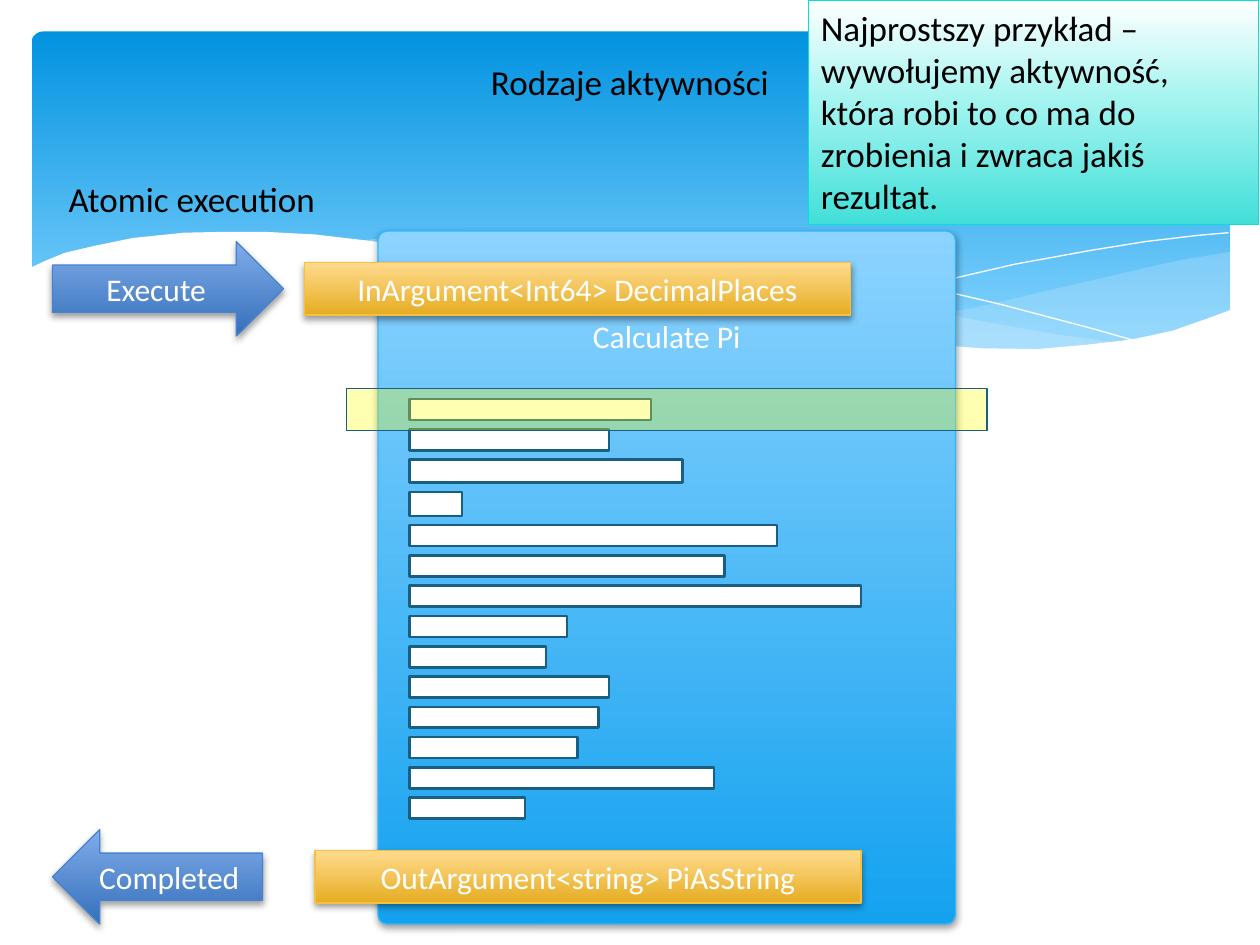
import copy

import lxml.etree
import pptx
import pptx.dml.color
import pptx.enum.shapes
import pptx.enum.text
import pptx.oxml.ns
import pptx.util

Pt = pptx.util.Pt
qn = pptx.oxml.ns.qn
SHAPE = pptx.enum.shapes.MSO_SHAPE
ALIGN = pptx.enum.text.PP_ALIGN
ANCHOR = pptx.enum.text.MSO_ANCHOR

BLUE_ARROW = [(0, "80ACEA"), (100, "3570BA")]
GOLD = [(0, "FFDB8E"), (100, "E6AD22")]

# Outlines of the header waves, as points
RIGHT_WAVE = [
    (702, 144), (673, 149), (642, 156), (599, 166), (561, 175), (525, 182),
    (476, 191), (508, 195), (536, 198), (570, 199.5), (601, 199.5),
    (634, 196.5), (663, 191), (683, 185), (703, 178), (703, 144)]
MIDDLE_WAVE = [
    (643, 196.5), (603, 191), (558, 183), (508, 173), (453, 160), (420, 152),
    (390, 146), (361, 141), (334, 137.5), (302, 134.5), (274, 134),
    (248, 134), (225, 135.5), (206, 137.5), (246, 143), (291, 152),
    (323, 160), (382, 173), (433, 183.5), (479, 191.5), (520, 197),
    (557, 200), (589, 201), (617, 199.5)]
FALLING_LINE = [
    (222, 140), (247, 137), (279, 134.5), (312, 134.5), (352, 137),
    (400, 142), (438, 147), (479, 153.5), (523, 162.5), (572, 174),
    (625, 188), (653, 196)]
RISING_LINE = [
    (441, 185), (484, 173.5), (539, 160.5), (580, 151), (624, 143),
    (655, 138), (685, 134.5), (702, 133)]
WHITE_WAVE = [
    (703.5, 177), (690, 182), (670, 189), (647, 194), (621, 197),
    (593, 199.5), (560, 199), (523, 196), (481, 191), (434, 183), (381, 172),
    (322, 158.5), (282, 149), (244, 142), (210, 137.5), (180, 134),
    (152, 132.5), (127, 132.5), (105, 133), (76, 136), (54, 140.5),
    (37, 144.5), (26, 149), (16.5, 153.5), (16.5, 237), (703.5, 237)]

# Width and height of each code line
CODE_LINES = [
    (138, 12), (114, 12), (156, 13.2), (30, 13.7), (210, 12), (180, 12),
    (258, 12), (90, 12), (78, 12), (114, 12), (108, 12), (96, 12),
    (174, 12), (66, 12)]
CODE_GAP = 5.3


def color(hex_text):
    return pptx.dml.color.RGBColor.from_string(hex_text)


class SlideBuilder:
    font = "Calibri"

    def __init__(self, slide):
        self.slide = slide

    def paint(self, shape, fill=None, line=None, line_width=0.75, alpha=None):
        """Fill is a hex string, a list of (percent, hex) stops, or None."""
        shape.shadow.inherit = False
        properties = shape._element.spPr
        if fill is None:
            shape.fill.background()
        elif isinstance(fill, str):
            shape.fill.solid()
            shape.fill.fore_color.rgb = color(fill)
            if alpha is not None:
                solid = properties.find(qn("a:solidFill"))
                lxml.etree.SubElement(
                    solid[0], qn("a:alpha"), val=str(alpha * 1000))
        else:
            shape.fill.gradient()
            shape.fill.gradient_angle = 270
            stop_list = properties.find(qn("a:gradFill")).find(qn("a:gsLst"))
            while len(stop_list) < len(fill):
                stop_list.append(copy.deepcopy(stop_list[0]))
            for stop, (percent, hex_text) in zip(shape.fill.gradient_stops, fill):
                stop.position = percent / 100
                stop.color.rgb = color(hex_text)
        if line is None:
            shape.line.fill.background()
        else:
            shape.line.color.rgb = color(line)
            shape.line.width = Pt(line_width)

    def shape(self, kind, left, top, width, height, corner=None, **style):
        shape = self.slide.shapes.add_shape(
            kind, Pt(left), Pt(top), Pt(width), Pt(height))
        if corner is not None:
            shape.adjustments[0] = corner
        self.paint(shape, **style)
        return shape

    def raised(self, kind, left, top, width, height, text, **style):
        """Add a captioned shape with a soft shadow below it."""
        shape = self.shape(kind, left, top, width, height, **style)
        effects = shape._element.spPr.find(qn("a:effectLst"))
        shadow = lxml.etree.SubElement(
            effects, qn("a:outerShdw"), blurRad=str(Pt(4)), dist=str(Pt(2)),
            dir="5400000", rotWithShape="0")
        black = lxml.etree.SubElement(shadow, qn("a:srgbClr"), val="000000")
        lxml.etree.SubElement(black, qn("a:alpha"), val="38000")
        self.caption(shape, text, 18, "FFFFFF", ALIGN.CENTER, ANCHOR.MIDDLE)
        return shape

    def freeform(self, points, closed=True, **style):
        start, *others = [(Pt(x), Pt(y)) for x, y in points]
        builder = self.slide.shapes.build_freeform(*start)
        builder.add_line_segments(others, close=closed)
        self.paint(builder.convert_to_shape(), **style)

    def text_box(self, left, top, width, height, text, align, anchor, wrap=True):
        box = self.slide.shapes.add_textbox(
            Pt(left), Pt(top), Pt(width), Pt(height))
        self.caption(box, text, 20, "000000", align, anchor, wrap)

    def caption(self, shape, text, size, text_color, align, anchor, wrap=True):
        frame = shape.text_frame
        frame.text = text
        frame.word_wrap = wrap
        frame.vertical_anchor = anchor
        paragraph = frame.paragraphs[0]
        paragraph.alignment = align
        font = paragraph.runs[0].font
        font.name = self.font
        font.size = Pt(size)
        font.color.rgb = color(text_color)


def add_header(builder):
    builder.shape(SHAPE.ROUNDED_RECTANGLE, 18, 18, 684.7, 194.4, corner=0.034,
                  fill=[(0, "0293E0"), (90, "83D3FE")])
    builder.freeform(RIGHT_WAVE, fill="C6E7FC", alpha=29)
    builder.freeform(MIDDLE_WAVE, fill="C6E7FC", alpha=40)
    for points in (FALLING_LINE, RISING_LINE):
        builder.freeform(points, closed=False, line="FFFFFF", line_width=0)
    builder.freeform(WHITE_WAVE, fill="FFFFFF")
    builder.text_box(36, 26.6, 648, 39.6, "Rodzaje aktywności",
                     ALIGN.CENTER, ANCHOR.MIDDLE)


def add_activity(builder):
    panel = builder.raised(
        SHAPE.ROUNDED_RECTANGLE, 216, 132, 330, 396, "Calculate Pi",
        corner=0.016, fill=[(0, "8CD3FF"), (100, "14A2EF")], line="31B6FD")
    panel.text_frame.vertical_anchor = ANCHOR.TOP
    panel.text_frame.margin_top = Pt(47.5)
    for left, top, text in (
            (174, 150, "InArgument<Int64> DecimalPlaces"),
            (180, 486, "OutArgument<string> PiAsString")):
        builder.raised(SHAPE.RECTANGLE, left, top, 312, 30, text,
                       fill=GOLD, line="F5C040")

    top = 228
    for width, height in CODE_LINES:
        builder.shape(SHAPE.RECTANGLE, 234, top, width, height,
                      fill="FFFFFF", line="195F84", line_width=1.5)
        top += height + CODE_GAP

    for kind, top, width, text in (
            (SHAPE.RIGHT_ARROW, 138, 132, "Execute"),
            (SHAPE.LEFT_ARROW, 474, 120, "Completed")):
        builder.raised(kind, 30, top, width, 54, text,
                       fill=BLUE_ARROW, line="4584D3")
    builder.shape(SHAPE.RECTANGLE, 198, 222, 366, 24, fill="FFFF00",
                  alpha=30, line="195F84", line_width=1)


def add_notes(builder):
    builder.text_box(32.1, 98, 157, 31.5, "Atomic execution",
                     ALIGN.LEFT, ANCHOR.TOP, wrap=False)
    callout = builder.shape(
        SHAPE.RECTANGLE, 462, 0, 257.3, 128.2, line="05E0DB",
        fill=[(0, "FFFFFF"), (44, "A5F4F0"), (100, "42DFD9")])
    builder.caption(
        callout,
        "Najprostszy przykład – wywołujemy aktywność, która robi to co ma do "
        "zrobienia i zwraca jakiś rezultat.",
        20, "000000", ALIGN.LEFT, ANCHOR.TOP)


def main():
    presentation = pptx.Presentation()
    presentation.slide_width = Pt(720)
    presentation.slide_height = Pt(540)
    slide = presentation.slides.add_slide(presentation.slide_layouts[6])
    builder = SlideBuilder(slide)
    add_header(builder)
    add_activity(builder)
    add_notes(builder)
    presentation.save("out.pptx")


if __name__ == "__main__":
    main()
